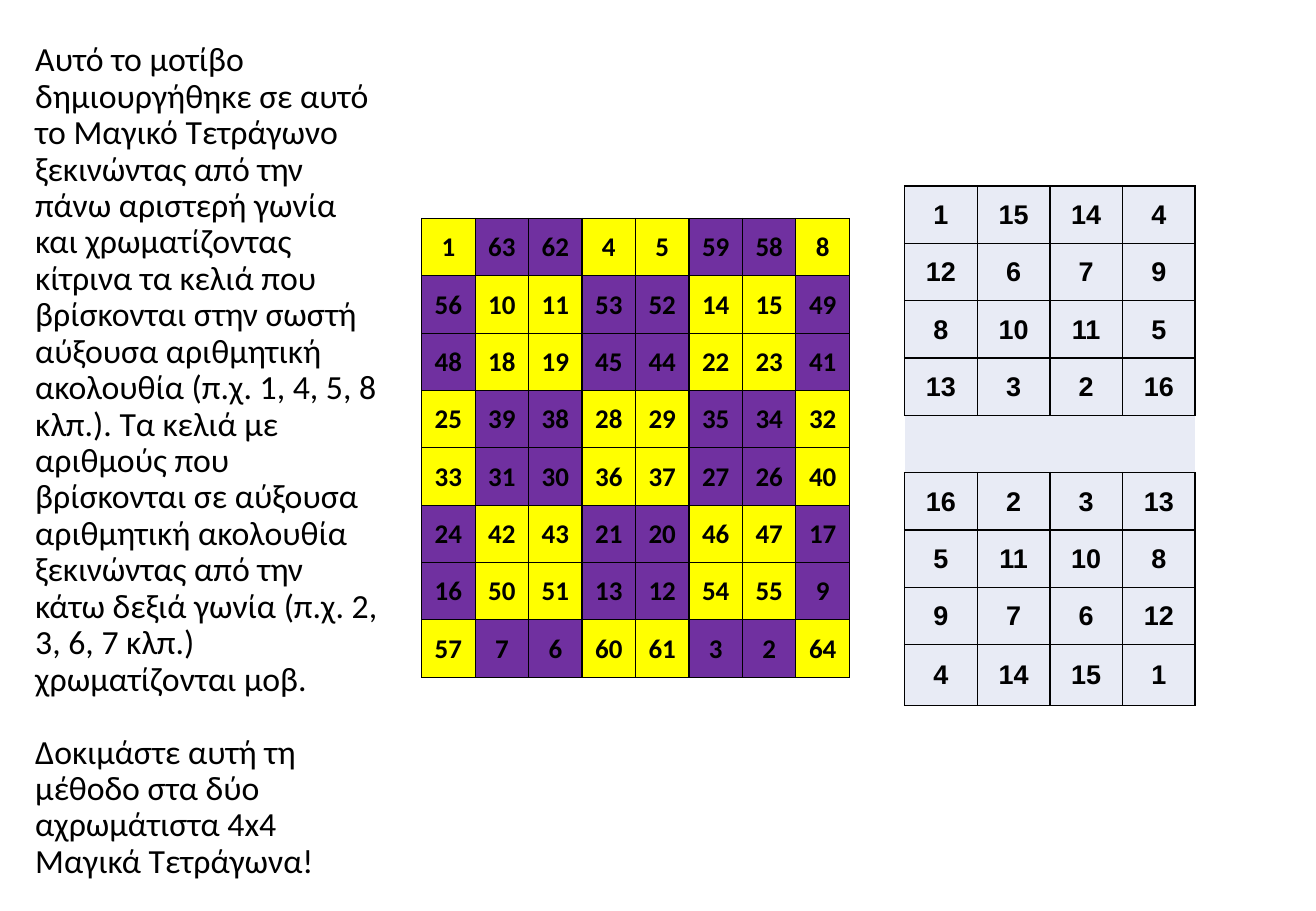
import pptx
import pptx.util
import pptx.dml.color
import pptx.enum.text
import pptx.oxml.ns
import lxml.etree

Pt = pptx.util.Pt
COLORS = {"ink": "000000", "yellow": "FFFF00", "purple": "7030A0", "pale": "E8EBF5"}

INSTRUCTIONS = [
    "Αυτό το μοτίβο δημιουργήθηκε σε αυτό το Μαγικό Τετράγωνο ξεκινώντας από την "
    "πάνω αριστερή γωνία και χρωματίζοντας κίτρινα τα κελιά που βρίσκονται στην "
    "σωστή αύξουσα αριθμητική ακολουθία (π.χ. 1, 4, 5, 8 κλπ.). Τα κελιά με αριθμούς "
    "που βρίσκονται σε αύξουσα αριθμητική ακολουθία ξεκινώντας από την κάτω δεξιά "
    "γωνία (π.χ. 2, 3, 6, 7 κλπ.) χρωματίζονται μοβ.",
    "Δοκιμάστε αυτή τη μέθοδο στα δύο αχρωμάτιστα 4x4 Μαγικά Τετράγωνα!",
]
LARGE_SQUARE = [
    [1, 63, 62, 4, 5, 59, 58, 8],
    [56, 10, 11, 53, 52, 14, 15, 49],
    [48, 18, 19, 45, 44, 22, 23, 41],
    [25, 39, 38, 28, 29, 35, 34, 32],
    [33, 31, 30, 36, 37, 27, 26, 40],
    [24, 42, 43, 21, 20, 46, 47, 17],
    [16, 50, 51, 13, 12, 54, 55, 9],
    [57, 7, 6, 60, 61, 3, 2, 64],
]
FIRST_SMALL_SQUARE = [[1, 15, 14, 4], [12, 6, 7, 9], [8, 10, 11, 5], [13, 3, 2, 16]]
SECOND_SMALL_SQUARE = [[16, 2, 3, 13], [5, 11, 10, 8], [9, 7, 6, 12], [4, 14, 15, 1]]
GAP_ROW = [None] * 4


def color(name):
    return pptx.dml.color.RGBColor.from_string(COLORS[name])


def add_span(para, text, font_name, size, bold=False):
    span = para.add_run()
    span.text = text
    span.font.name = font_name
    span.font.size = Pt(size)
    span.font.bold = bold
    span.font.color.rgb = color("ink")


def set_borders(cell, width, visible_sides):
    properties = cell._tc.get_or_add_tcPr()
    for side in "LRTB":
        line = lxml.etree.SubElement(properties, pptx.oxml.ns.qn(f"a:ln{side}"))
        line.set("w", str(Pt(width)))
        if side in visible_sides:
            fill = lxml.etree.SubElement(line, pptx.oxml.ns.qn("a:solidFill"))
            lxml.etree.SubElement(fill, pptx.oxml.ns.qn("a:srgbClr"), val=COLORS["ink"])
        else:
            lxml.etree.SubElement(line, pptx.oxml.ns.qn("a:noFill"))


def sequence_color(row, column, number):
    """Yellow where the number matches counting from the top left."""
    return "yellow" if number == row * 8 + column + 1 else "purple"


def plain_color(row, column, number):
    return "pale"


def fill_cell(cell, number, fill_name, font_name, border_width):
    set_borders(cell, border_width, "TB" if number is None else "LRTB")
    cell.fill.solid()
    cell.fill.fore_color.rgb = color(fill_name)
    if number is None:
        return
    cell.margin_left = cell.margin_right = cell.margin_top = Pt(0.72)
    cell.margin_bottom = 0
    cell.vertical_anchor = pptx.enum.text.MSO_ANCHOR.MIDDLE
    para = cell.text_frame.paragraphs[0]
    para.alignment = pptx.enum.text.PP_ALIGN.CENTER
    add_span(para, str(number), font_name, 16, bold=True)


def add_instructions(page, left, top, width, height):
    box = page.shapes.title
    box.left, box.top, box.width, box.height = Pt(left), Pt(top), Pt(width), Pt(height)
    frame = box.text_frame
    frame.word_wrap = True
    frame.auto_size = pptx.enum.text.MSO_AUTO_SIZE.NONE
    frame.vertical_anchor = pptx.enum.text.MSO_ANCHOR.TOP
    for index, text in enumerate(INSTRUCTIONS):
        para = frame.add_paragraph() if index else frame.paragraphs[0]
        para.alignment = pptx.enum.text.PP_ALIGN.LEFT
        para.line_spacing = 0.9
        para.space_before = Pt(21.6 if index else 0)
        add_span(para, text, "Calibri", 20)


def add_number_table(page, left, top, width, row_heights, numbers,
                     pick_color, font_name, border_width):
    column_count = len(numbers[0])
    table = page.shapes.add_table(len(numbers), column_count, Pt(left), Pt(top),
                                  Pt(width), Pt(sum(row_heights))).table
    table.first_row = False
    table.horz_banding = False
    for column in table.columns:
        column.width = Pt(width / column_count)
    for row, height in enumerate(row_heights):
        table.rows[row].height = Pt(height)
        for column, number in enumerate(numbers[row]):
            fill_cell(table.cell(row, column), number,
                      pick_color(row, column, number), font_name, border_width)


def main():
    deck = pptx.Presentation()
    deck.slide_width, deck.slide_height = Pt(780), Pt(540)
    page = deck.slides.add_slide(deck.slide_layouts[5])

    # Instructions on the left
    add_instructions(page, 13.7, 21.6, 218.9, 518.4)
    # Coloured 8x8 magic square
    add_number_table(page, 249.9, 129.5, 253.6, [34] * 8, LARGE_SQUARE,
                     sequence_color, "Calibri", 0.75)
    # Two blank 4x4 magic squares with a gap between them
    add_number_table(page, 536.2, 110.2, 172.2, [34] * 8 + [36],
                     FIRST_SMALL_SQUARE + [GAP_ROW] + SECOND_SMALL_SQUARE,
                     plain_color, "Arial", 1)

    deck.save("out.pptx")


if __name__ == "__main__":
    main()
